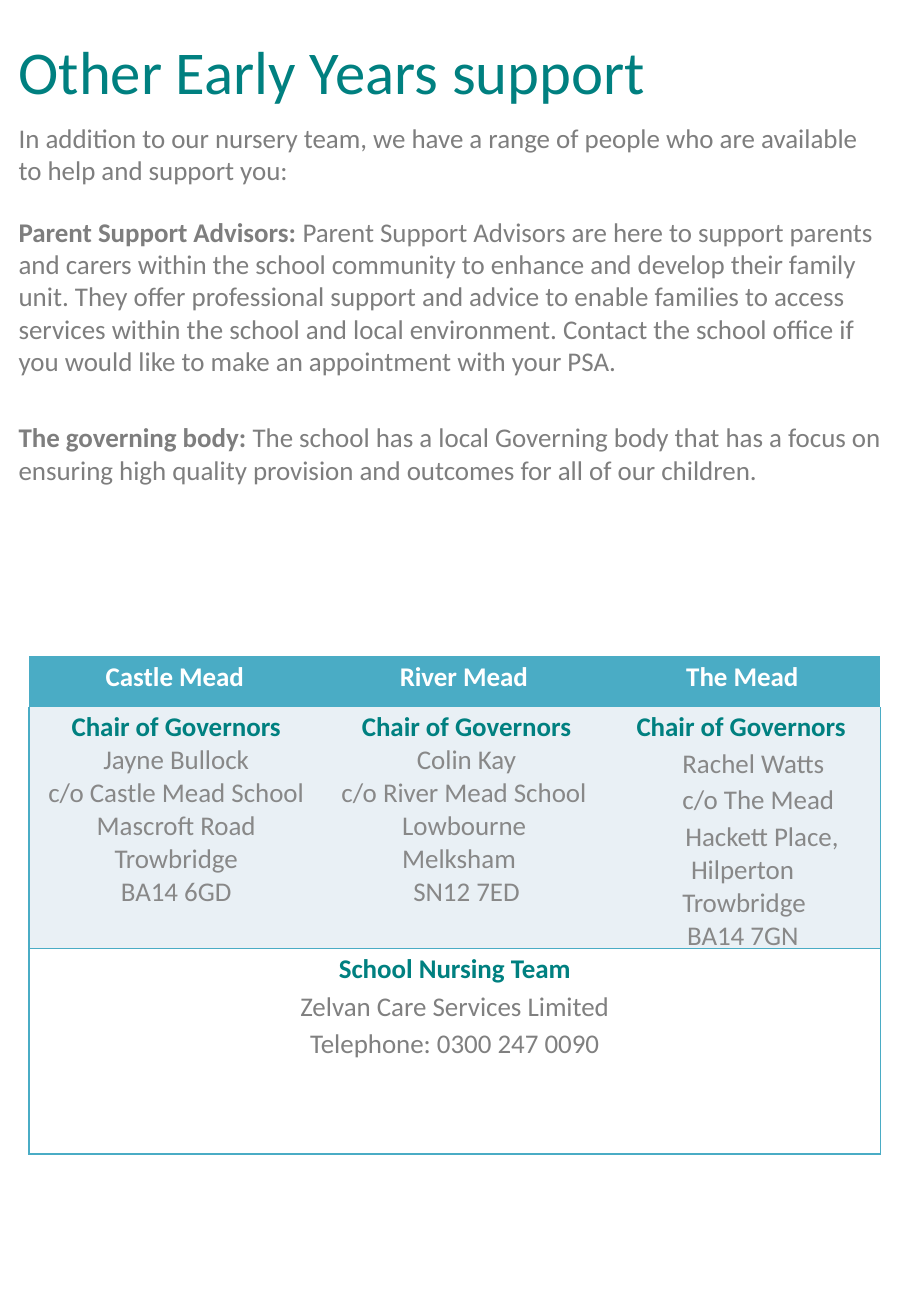
from dataclasses import dataclass

from lxml.etree import SubElement
from pptx import Presentation
from pptx.dml.color import RGBColor
from pptx.enum.text import MSO_ANCHOR, PP_ALIGN
from pptx.oxml.ns import qn
from pptx.util import Cm, Pt

TEAL = RGBColor(0x00, 0x80, 0x80)
TEXT_GREY = RGBColor(0x7E, 0x7E, 0x7E)
ADDRESS_GREY = RGBColor(0x88, 0x88, 0x88)
NURSING_GREY = RGBColor(0x80, 0x80, 0x80)
WHITE = RGBColor(0xFF, 0xFF, 0xFF)
HEADER_BLUE = RGBColor(0x4A, 0xAC, 0xC5)
PALE_BLUE = RGBColor(0xE9, 0xF0, 0xF5)

FONT = "Calibri"
PLAIN_TABLE_STYLE = "{2D5ABB26-0587-4C30-8999-92F81FD0307C}"


@dataclass
class Line:
    """One paragraph: a bold lead, then regular text; no indent means centred."""
    text: str = ""
    lead: str = ""
    color: RGBColor = ADDRESS_GREY
    lead_color: RGBColor = TEAL
    size: float = 16
    before: float = 0
    indent: float | None = None


@dataclass
class School:
    name: str
    chair: list[Line]


def add_run(paragraph, text: str, *, size: float, color: RGBColor, bold: bool = False) -> None:
    run = paragraph.add_run()
    run.text = text
    run.font.name = FONT
    run.font.size = Pt(size)
    run.font.bold = bold
    run.font.color.rgb = color


def write_lines(frame, lines: list[Line]) -> None:
    frame.word_wrap = True
    for index, line in enumerate(lines):
        paragraph = frame.add_paragraph() if index else frame.paragraphs[0]
        paragraph.space_before = Pt(line.before)
        if line.indent is None:
            paragraph.alignment = PP_ALIGN.CENTER
        else:
            paragraph.alignment = PP_ALIGN.LEFT
            properties = paragraph._p.get_or_add_pPr()
            properties.set("marL", str(Cm(line.indent)))
            properties.set("indent", "0")
        if line.lead:
            add_run(paragraph, line.lead, size=line.size, color=line.lead_color, bold=True)
        if line.text:
            add_run(paragraph, line.text, size=line.size, color=line.color)


def add_text(slide, lines: list[Line], *, left: float, top: float, width: float,
             height: float, inset: float) -> None:
    frame = slide.shapes.add_textbox(Cm(left), Cm(top), Cm(width), Cm(height)).text_frame
    frame.margin_left = frame.margin_right = frame.margin_bottom = 0
    frame.margin_top = Cm(inset)
    write_lines(frame, lines)


def set_cell(cell, lines: list[Line], *, inset: float, sides: str = "",
             fill: RGBColor | None = None) -> None:
    cell.margin_left = cell.margin_right = cell.margin_bottom = 0
    cell.margin_top = Cm(inset)
    cell.vertical_anchor = MSO_ANCHOR.TOP
    properties = cell._tc.get_or_add_tcPr()
    for side in sides:
        border = SubElement(properties, qn(f"a:ln{side}"), w=str(Pt(1)))
        solid = SubElement(border, qn("a:solidFill"))
        SubElement(solid, qn("a:srgbClr"), val=str(HEADER_BLUE))
    if fill is None:
        cell.fill.background()
    else:
        cell.fill.solid()
        cell.fill.fore_color.rgb = fill
    if lines:
        write_lines(cell.text_frame, lines)


TITLE = [
    Line("Other Early Years support", color=TEAL, size=36, indent=0.03),
    Line("In addition to our nursery team, we have a range of people who are available "
         "to help and support you:", color=TEXT_GREY, before=8.6, indent=0.03),
]
BODY = [
    Line("Parent Support Advisors are here to support parents and carers within the school "
         "community to enhance and develop their family unit. They offer professional support "
         "and advice to enable families to access services within the school and local "
         "environment. Contact the school office if you would like to make an appointment "
         "with your PSA.",
         lead="Parent Support Advisors: ", color=TEXT_GREY, lead_color=TEXT_GREY, indent=0.03),
    Line("The school has a local Governing body that has a focus on ensuring high quality "
         "provision and outcomes for all of our children.",
         lead="The governing body: ", color=TEXT_GREY, lead_color=TEXT_GREY,
         before=26, indent=0.03),
]
CHAIR = "Chair of Governors"
SCHOOLS = [
    School("Castle Mead", [
        Line(lead=CHAIR),
        Line("Jayne Bullock"),
        Line("c/o Castle Mead School"),
        Line("Mascroft Road"),
        Line("Trowbridge"),
        Line("BA14 6GD"),
    ]),
    School("River Mead", [
        Line(lead=CHAIR),
        Line("Colin Kay"),
        Line("c/o River Mead School", indent=0.38),
        Line("Lowbourne", indent=1.65),
        Line("Melksham", indent=1.65),
        Line("SN12 7ED"),
    ]),
    School("The Mead", [
        Line(lead=CHAIR, indent=0.56),
        Line("Rachel Watts", before=2.1, indent=1.52),
        Line("c/o The Mead", before=2.1, indent=1.52),
        Line("Hackett Place,", before=2.1, indent=1.58),
        Line("Hilperton", indent=1.7),
        Line("Trowbridge", indent=1.52),
        Line("BA14 7GN", indent=1.62),
    ]),
]
NURSING = [
    Line(lead="School Nursing Team"),
    Line("Zelvan Care Services Limited", color=NURSING_GREY, before=2.6),
    Line("Telephone: 0300 247 0090", color=NURSING_GREY, before=2.6),
]
COLUMN_WIDTHS = [6.15, 5.99, 5.66]
ROW_HEIGHTS = [1.06, 5.04, 4.3]


def add_contacts(slide) -> None:
    frame = slide.shapes.add_table(
        len(ROW_HEIGHTS), len(COLUMN_WIDTHS), Cm(0.61), Cm(13.72),
        Cm(sum(COLUMN_WIDTHS)), Cm(sum(ROW_HEIGHTS)))
    table = frame.table
    table.first_row = table.horz_banding = False
    table._tbl.tblPr.find(qn("a:tableStyleId")).text = PLAIN_TABLE_STYLE
    for column, width in zip(table.columns, COLUMN_WIDTHS):
        column.width = Cm(width)
    for row, height in zip(table.rows, ROW_HEIGHTS):
        row.height = Cm(height)

    # One column per school
    for index, (school, sides) in enumerate(zip(SCHOOLS, ["LB", "B", "RB"])):
        heading = Line(lead=school.name, lead_color=WHITE, indent=1.6)
        set_cell(table.cell(0, index), [heading], inset=0.1, fill=HEADER_BLUE)
        set_cell(table.cell(1, index), school.chair, inset=0.08, sides=sides, fill=PALE_BLUE)

    # Nursing team across the full width
    table.cell(2, 0).merge(table.cell(2, 2))
    for index in range(len(SCHOOLS)):
        set_cell(table.cell(2, index), [] if index else NURSING, inset=0.1, sides="LRTB")


def main() -> None:
    presentation = Presentation()
    presentation.slide_width = Cm(19.05)
    presentation.slide_height = Cm(27.51)
    slide = presentation.slides.add_slide(presentation.slide_layouts[6])

    # Title and introduction, then the support paragraphs
    add_text(slide, TITLE, left=0.36, top=0, width=17.68, height=3.94, inset=0.71)
    add_text(slide, BODY, left=0.36, top=4.47, width=18.14, height=5.77, inset=0.03)

    # Contact table
    add_contacts(slide)
    presentation.save("out.pptx")


if __name__ == "__main__":
    main()
